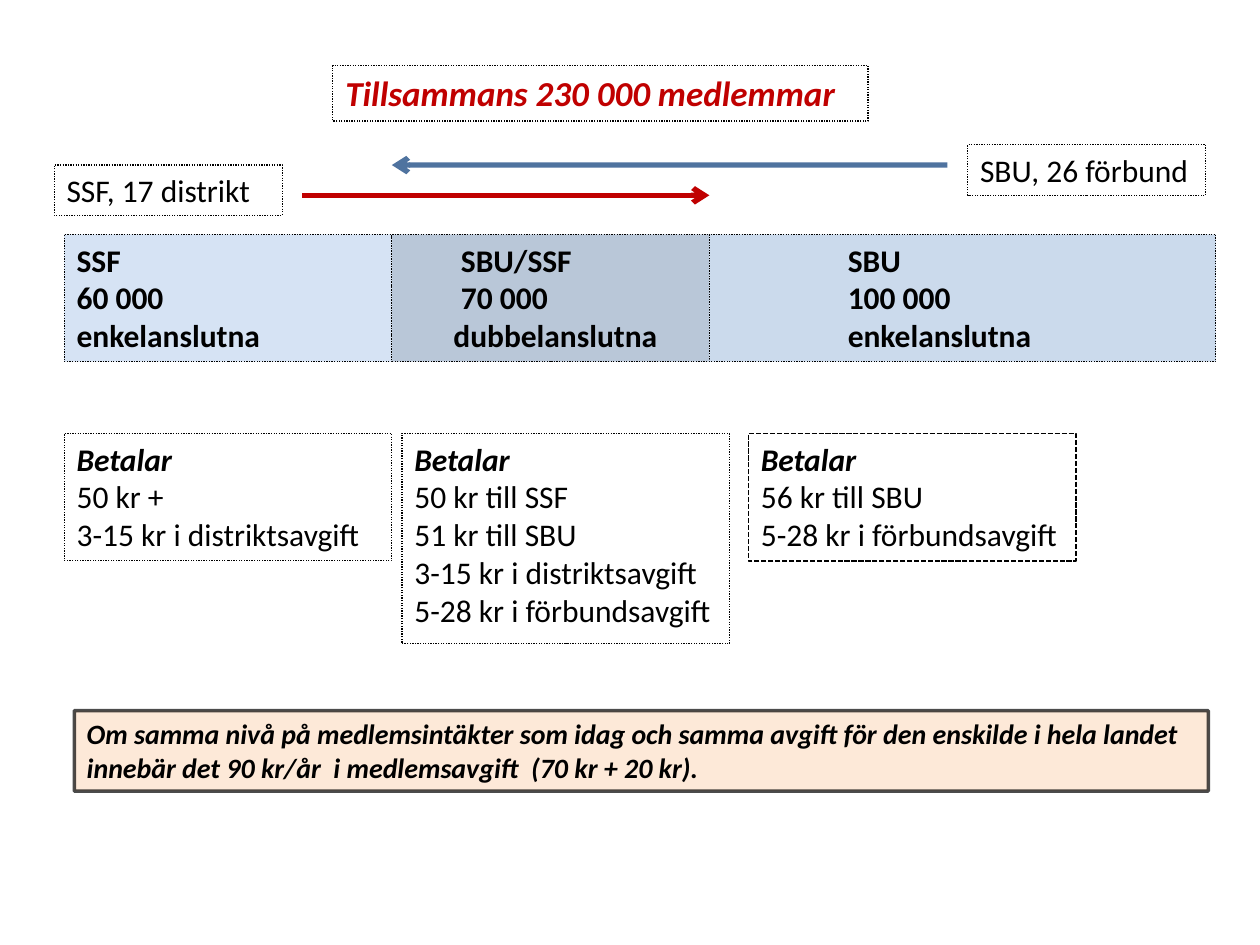
from dataclasses import dataclass
from typing import Any, Optional

from lxml import etree
from pptx import Presentation
from pptx.dml.color import RGBColor
from pptx.enum.dml import MSO_LINE
from pptx.enum.shapes import MSO_CONNECTOR
from pptx.enum.text import MSO_ANCHOR, MSO_AUTO_SIZE, PP_ALIGN
from pptx.oxml.ns import qn
from pptx.util import Emu, Inches, Pt

DOT, DASH, SOLID = MSO_LINE.ROUND_DOT, MSO_LINE.SQUARE_DOT, MSO_LINE.SOLID
STRAIGHT = MSO_CONNECTOR.STRAIGHT
TOP, LEFT, NO_FIT = MSO_ANCHOR.TOP, PP_ALIGN.LEFT, MSO_AUTO_SIZE.NONE

WIDTH, HEIGHT = Inches(10), Inches(7.5)
COLS, ROWS = 100, 75
COLORS = {
    "text": "000000",
    "red": "C00000",
    "blue": "376092",
    "left": "8EB4E3",
    "right": "B9CDE5",
    "note": "FCD5B5",
}
PLAIN = {"size": Pt(18), "bold": False, "italic": False}
BOLD = {**PLAIN, "bold": True}
HEAD = {**BOLD, "italic": True}
NOTE = {**HEAD, "size": Pt(16)}
TITLE = {**HEAD, "size": Pt(20)}


@dataclass
class Line:
    text: str
    style: dict[str, Any]
    indent: float = 0
    color: str = "text"


@dataclass
class Box:
    col: float
    row: float
    cols: float
    rows: float
    lines: list[Line]
    fill: Optional[str] = None
    fill_alpha: int = 100
    dash: Any = DOT
    width: float = 0.75
    line_alpha: int = 100
    wrap: bool = True


@dataclass
class Arrow:
    start: float
    end: float
    row: float
    color: str
    alpha: int = 100


BAND_ROW, BAND_ROWS = 18.6, 10.1
PAY_ROW, PAY_COLS = 34.4, 26
EDGES = [5.1, 31.1, 56.3, 96.5]

TITLE_BOX = Box(26.4, 5.2, 42.5, 4.4,
                [Line("Tillsammans 230 000 medlemmar", TITLE, color="red")])
GROUPS = [
    (["SSF", "60 000", "enkelanslutna"], [0, 0, 0], "left", 36),
    (["SBU/SSF", "70 000", "dubbelanslutna"], [4.5, 4.5, 3.9], "blue", 35),
    (["SBU", "100 000", "enkelanslutna"], [10, 10, 10], "right", 73),
]
PAYMENTS = [
    (5.1, 10.1, DOT, 0.75, ["50 kr +", "3-15 kr i distriktsavgift"]),
    (31.9, 16.7, DOT, 0.75, ["50 kr till SSF", "51 kr till SBU",
                             "3-15 kr i distriktsavgift", "5-28 kr i förbundsavgift"]),
    (59.4, 10.1, DASH, 1, ["56 kr till SBU", "5-28 kr i förbundsavgift"]),
]
LABELS = [
    Box(76.8, 11.5, 18.9, 4, [Line("SBU, 26 förbund", PLAIN)]),
    Box(4.3, 13.1, 18.1, 4, [Line("SSF, 17 distrikt", PLAIN)]),
]
ARROWS = [
    Arrow(24, EDGES[2], 15.5, "red"),
    Arrow(75.2, EDGES[1], 13.1, "blue", 88),
]
NOTE_BOX = Box(5.9, 56.4, 90, 6.4, [
    Line("Om samma nivå på medlemsintäkter som idag och samma avgift "
         "för den enskilde i hela landet", NOTE),
    Line("innebär det 90 kr/år  i medlemsavgift  (70 kr + 20 kr).", NOTE),
], "note", 52, SOLID, 2, 70, wrap=False)


def x(cols: float) -> Emu:
    return Emu(round(WIDTH * cols / COLS))


def y(rows: float) -> Emu:
    return Emu(round(HEIGHT * rows / ROWS))


def paint(fill: Any, color: str, alpha: int) -> None:
    fill.solid()
    fill.fore_color.rgb = RGBColor.from_string(COLORS[color])
    if alpha < 100:
        clr = fill._xPr.find(qn("a:solidFill")).find(qn("a:srgbClr"))
        etree.SubElement(clr, qn("a:alpha")).set("val", str(alpha * 1000))


def format_box(sp: Any, box: Box) -> None:
    sp.left, sp.top = x(box.col), y(box.row)
    sp.width, sp.height = x(box.cols), y(box.rows)
    if box.fill:
        paint(sp.fill, box.fill, box.fill_alpha)
    paint(sp.line.fill, "text", box.line_alpha)
    sp.line.width, sp.line.dash_style = Pt(box.width), box.dash
    tf = sp.text_frame
    tf.auto_size, tf.word_wrap, tf.vertical_anchor = NO_FIT, box.wrap, TOP
    for i, line in enumerate(box.lines):
        p = tf.add_paragraph() if i else tf.paragraphs[0]
        p.alignment = LEFT
        if line.indent:
            p._p.get_or_add_pPr().set("marL", str(x(line.indent)))
        r = p.add_run()
        r.text = line.text
        for name, value in {"name": "Calibri", **line.style}.items():
            setattr(r.font, name, value)
        r.font.color.rgb = RGBColor.from_string(COLORS[line.color])


def add_box(s: Any, box: Box) -> None:
    format_box(s.shapes.add_textbox(0, 0, 0, 0), box)


def add_arrow(s: Any, arrow: Arrow) -> None:
    cx = s.shapes.add_connector(STRAIGHT, x(arrow.start), y(arrow.row),
                                x(arrow.end), y(arrow.row))
    paint(cx.line.fill, arrow.color, arrow.alpha)
    cx.line.width = Pt(3)
    etree.SubElement(cx.line._get_or_add_ln(), qn("a:tailEnd")).set("type", "arrow")
    etree.SubElement(cx._element.spPr, qn("a:effectLst"))


def main() -> None:
    prs = Presentation()
    prs.slide_width, prs.slide_height = WIDTH, HEIGHT
    s = prs.slides.add_slide(prs.slide_layouts[5])
    format_box(s.shapes.title, TITLE_BOX)
    for start, end, (texts, indents, fill, alpha) in zip(EDGES, EDGES[1:], GROUPS):
        lines = [Line(text, BOLD, indent) for text, indent in zip(texts, indents)]
        add_box(s, Box(start, BAND_ROW, end - start, BAND_ROWS, lines, fill, alpha))
    for col, rows, dash, width, fees in PAYMENTS:
        lines = [Line("Betalar", HEAD)] + [Line(fee, PLAIN) for fee in fees]
        add_box(s, Box(col, PAY_ROW, PAY_COLS, rows, lines, dash=dash, width=width))
    for box in LABELS + [NOTE_BOX]:
        add_box(s, box)
    for arrow in ARROWS:
        add_arrow(s, arrow)
    prs.save("out.pptx")


if __name__ == "__main__":
    main()
